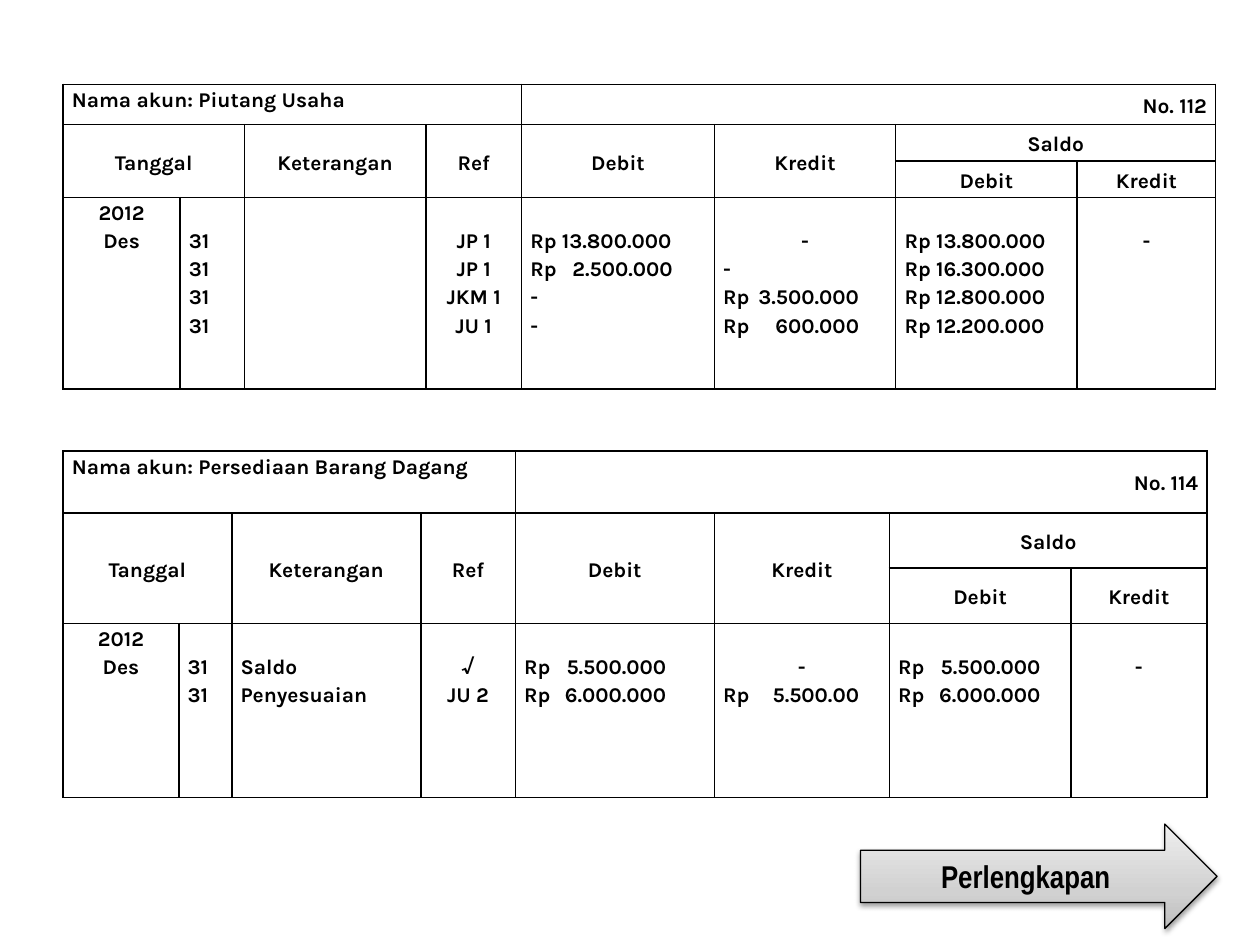
from copy import deepcopy

from lxml.etree import SubElement
from pptx import Presentation
from pptx.dml.color import RGBColor
from pptx.enum.shapes import MSO_SHAPE
from pptx.enum.text import MSO_ANCHOR, PP_ALIGN
from pptx.oxml import parse_xml
from pptx.oxml.ns import nsdecls, qn
from pptx.util import Inches, Pt

COLORS = {
    "ink": "000000",
    "arrow_dark": "BDBDBD",
    "arrow_middle": "D1D1D1",
    "arrow_light": "EEEEEE",
}
LINE_PITCH = 0.22
DATE, REF, KREDIT, SALDO_KREDIT = 0, 3, 5, 7
CENTERED_COLUMNS = (DATE, REF, SALDO_KREDIT)

# Row, column, last row, last column, text
HEADINGS = [
    (1, 0, 2, 1, "Tanggal"),
    (1, 2, 2, 2, "Keterangan"),
    (1, 3, 2, 3, "Ref"),
    (1, 4, 2, 4, "Debit"),
    (1, 5, 2, 5, "Kredit"),
    (1, 6, 1, 7, "Saldo"),
    (2, 6, 2, 6, "Debit"),
    (2, 7, 2, 7, "Kredit"),
]

LEDGERS = [
    {
        "name": "Nama akun: Piutang Usaha",
        "number": "No. 112",
        "top": 0.67,
        "columns": [0.93, 0.51, 1.44, 0.76, 1.53, 1.44, 1.44, 1.1],
        "rows": [0.32, 0.29, 0.29, 1.52],
        "entries": [
            ["2012", "Des"],
            ["31", "31", "31", "31"],
            [],
            ["JP 1", "JP 1", "JKM 1", "JU 1"],
            ["Rp 13.800.000", "Rp\t2.500.000", "-", "-"],
            ["-", "-", "Rp\t3.500.000", "Rp\t600.000"],
            ["Rp 13.800.000", "Rp 16.300.000", "Rp 12.800.000", "Rp 12.200.000"],
            ["-"],
        ],
    },
    {
        "name": "Nama akun: Persediaan Barang Dagang",
        "number": "No. 114",
        "top": 3.58,
        "columns": [0.92, 0.42, 1.5, 0.75, 1.58, 1.39, 1.44, 1.08],
        "rows": [0.49, 0.44, 0.44, 1.38],
        "entries": [
            ["2012", "Des"],
            ["31", "31"],
            ["Saldo", "Penyesuaian"],
            ["√", "JU 2"],
            ["Rp\t5.500.000", "Rp\t6.000.000"],
            ["-", "Rp\t5.500.00"],
            ["Rp\t5.500.000", "Rp\t6.000.000"],
            ["-"],
        ],
    },
]


def rgb(name):
    return RGBColor.from_string(COLORS[name])


def style_run(span, font_name, size):
    span.font.name = font_name
    span.font.size = Pt(size)
    span.font.bold = True
    span.font.color.rgb = rgb("ink")


def format_cell(cell):
    """Clear the fill, set the margins and draw all four borders."""
    cell.margin_left = cell.margin_right = Inches(0.07)
    cell.margin_top = cell.margin_bottom = 0
    cell.fill.background()
    properties = cell._tc.get_or_add_tcPr()
    for index, side in enumerate(("lnL", "lnR", "lnT", "lnB")):
        border = parse_xml(
            f'<a:{side} {nsdecls("a")} w="{Pt(1)}"><a:solidFill>'
            f'<a:srgbClr val="{COLORS["ink"]}"/></a:solidFill></a:{side}>'
        )
        properties.insert(index, border)


def add_right_tab(para, position):
    tabs = SubElement(para._p.get_or_add_pPr(), qn("a:tabLst"))
    SubElement(tabs, qn("a:tab"), pos=str(Inches(position)), algn="r")


def write_line(para, text, alignment):
    para.text = text
    para.alignment = alignment
    para.line_spacing = 1.15
    style_run(para.runs[0], "Karla", 12)


def write_heading(cell, text, alignment=PP_ALIGN.CENTER, anchor=MSO_ANCHOR.MIDDLE):
    cell.vertical_anchor = anchor
    write_line(cell.text_frame.paragraphs[0], text, alignment)


def write_entries(cell, column, lines):
    """Stack the entries of one column, level with the line below the year."""
    if column != DATE:
        cell.margin_top = Inches(LINE_PITCH)
    frame = cell.text_frame
    for index, text in enumerate(lines):
        para = frame.paragraphs[0] if index == 0 else frame.add_paragraph()
        centered = column in CENTERED_COLUMNS or (index == 0 and text == "-")
        write_line(para, text, PP_ALIGN.CENTER if centered else PP_ALIGN.JUSTIFY)
        if "\t" in text:
            add_right_tab(para, 1.08 if column == KREDIT else 1.13)


def add_ledger(page, ledger):
    columns, rows = ledger["columns"], ledger["rows"]
    table = page.shapes.add_table(
        len(rows), len(columns), Inches(0.5), Inches(ledger["top"]),
        Inches(sum(columns)), Inches(sum(rows)),
    ).table
    table.first_row = table.horz_banding = False
    for column, width in zip(table.columns, columns):
        column.width = Inches(width)
    for row, height in zip(table.rows, rows):
        row.height = Inches(height)
    for cell in table.iter_cells():
        format_cell(cell)

    for first in (0, 4):
        table.cell(0, first).merge(table.cell(0, first + 3))
    write_heading(table.cell(0, 0), ledger["name"], PP_ALIGN.JUSTIFY, MSO_ANCHOR.TOP)
    write_heading(table.cell(0, 4), ledger["number"], PP_ALIGN.RIGHT)
    for row, column, last_row, last_column, text in HEADINGS:
        cell = table.cell(row, column)
        if (row, column) != (last_row, last_column):
            cell.merge(table.cell(last_row, last_column))
        write_heading(cell, text)
    for column, lines in enumerate(ledger["entries"]):
        write_entries(table.cell(3, column), column, lines)


def fill_with_gradient(shape, stops, angle):
    shape.fill.gradient()
    shape.fill.gradient_angle = angle
    stop_list = shape._element.spPr.find(".//" + qn("a:gsLst"))
    while len(stop_list) < len(stops):
        stop_list.append(deepcopy(stop_list[-1]))
    for stop, (position, color) in zip(shape.fill.gradient_stops, stops):
        stop.position = position
        stop.color.rgb = rgb(color)


def add_soft_shadow(shape):
    shape.shadow.inherit = False
    shape._element.spPr.find(qn("a:effectLst")).append(parse_xml(
        f'<a:outerShdw {nsdecls("a")} blurRad="{Pt(3.1)}" dist="{Pt(1.6)}" '
        f'dir="5400000" rotWithShape="0"><a:srgbClr val="{COLORS["ink"]}">'
        f'<a:alpha val="38000"/></a:srgbClr></a:outerShdw>'
    ))


def add_next_arrow(page, text):
    arrow = page.shapes.add_shape(
        MSO_SHAPE.RIGHT_ARROW, Inches(6.83), Inches(6.54), Inches(2.83), Inches(0.83)
    )
    stops = [(0, "arrow_dark"), (0.35, "arrow_middle"), (1, "arrow_light")]
    fill_with_gradient(arrow, stops, 90)
    arrow.line.color.rgb = rgb("ink")
    arrow.line.width = Pt(0.75)
    add_soft_shadow(arrow)
    frame = arrow.text_frame
    frame.text = text
    frame.vertical_anchor = MSO_ANCHOR.MIDDLE
    frame.paragraphs[0].alignment = PP_ALIGN.CENTER
    style_run(frame.paragraphs[0].runs[0], "Arial Narrow", 18)


def main():
    deck = Presentation()
    deck.slide_width, deck.slide_height = Inches(10), Inches(7.5)
    page = deck.slides.add_slide(deck.slide_layouts[6])
    add_next_arrow(page, "Perlengkapan")
    for ledger in LEDGERS:
        add_ledger(page, ledger)
    deck.save("out.pptx")


if __name__ == "__main__":
    main()
